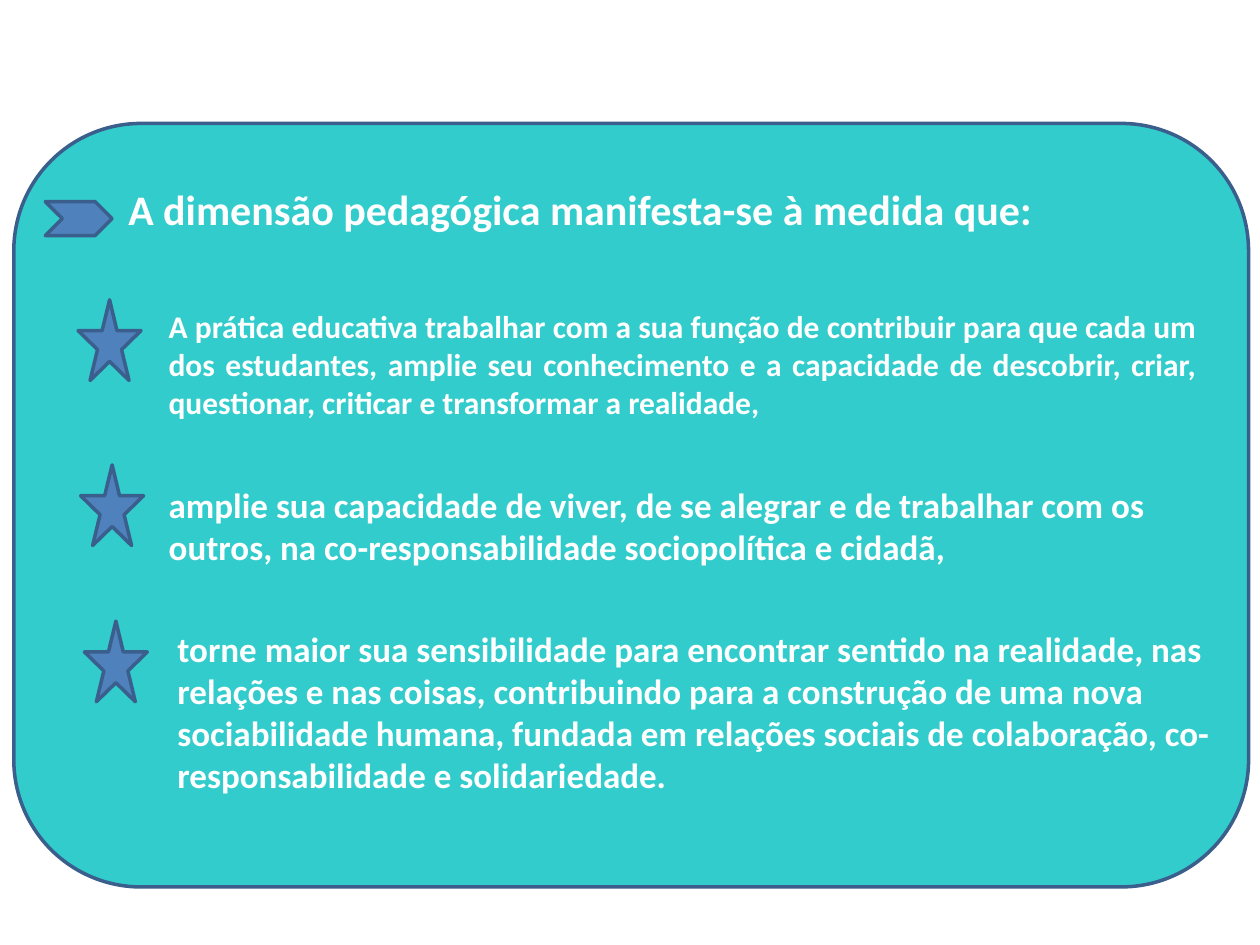
from pptx import Presentation
from pptx.dml.color import RGBColor
from pptx.enum import shapes, text
from pptx.util import Inches, Pt

TEAL = RGBColor(0x33, 0xCC, 0xCC)
BLUE = RGBColor(0x4F, 0x81, 0xBD)
EDGE = RGBColor(0x3A, 0x5F, 0x8C)
WHITE = RGBColor(0xFF, 0xFF, 0xFF)

LEFT, JUSTIFY = text.PP_ALIGN.LEFT, text.PP_ALIGN.JUSTIFY
STAR_SIZE = (0.5, 0.64)

TITLE = "A dimensão pedagógica manifesta-se à medida que:"
# star corner, text box, font size, alignment, wording
ITEMS = [
    ((0.62, 2.38), (1.24, 2.39, 8.36, 1.62), 18, JUSTIFY,
     "A prática educativa trabalhar com a sua função de contribuir para que "
     "cada um dos estudantes, amplie seu conhecimento e a capacidade de "
     "descobrir, criar, questionar, criticar e transformar a realidade,"),
    ((0.64, 3.69), (1.24, 3.79, 8.25, 0.77), 20, LEFT,
     "amplie sua capacidade de viver, de se alegrar e de trabalhar com os "
     "outros, na co-responsabilidade sociopolítica e cidadã,"),
    ((0.67, 4.93), (1.31, 4.93, 8.47, 2.09), 20, LEFT,
     "torne maior sua sensibilidade para encontrar sentido na realidade, nas "
     "relações e nas coisas, contribuindo para a construção de uma nova "
     "sociabilidade humana, fundada em relações sociais de colaboração, "
     "co-responsabilidade e solidariedade."),
]

prs = Presentation()
prs.slide_width, prs.slide_height = Inches(10), Inches(7.5)
s = prs.slides.add_slide(prs.slide_layouts[6])


def add_shape(kind, box, fill):
    sp = s.shapes.add_shape(kind, *map(Inches, box))
    sp.shadow.inherit = False
    sp.fill.solid()
    sp.fill.fore_color.rgb = fill
    sp.line.color.rgb = EDGE
    sp.line.width = Pt(2)


def add_text(box, wording, size, align=LEFT):
    tf = s.shapes.add_textbox(*map(Inches, box)).text_frame
    tf.word_wrap = True
    p = tf.paragraphs[0]
    p.text = wording
    p.alignment = align
    p.font.name = "Calibri"
    p.font.size = Pt(size)
    p.font.bold = True
    p.font.color.rgb = WHITE


# Panel and heading
add_shape(shapes.MSO_SHAPE.ROUNDED_RECTANGLE, (0.11, 0.98, 9.8, 6.06), TEAL)
add_text((0.92, 1.41, 8.86, 0.91), TITLE, 24)
add_shape(shapes.MSO_SHAPE.CHEVRON, (0.36, 1.6, 0.53, 0.27), BLUE)

# Starred items
for corner, box, size, align, wording in ITEMS:
    add_shape(shapes.MSO_SHAPE.STAR_5_POINT, corner + STAR_SIZE, BLUE)
    add_text(box, wording, size, align)

prs.save("out.pptx")
